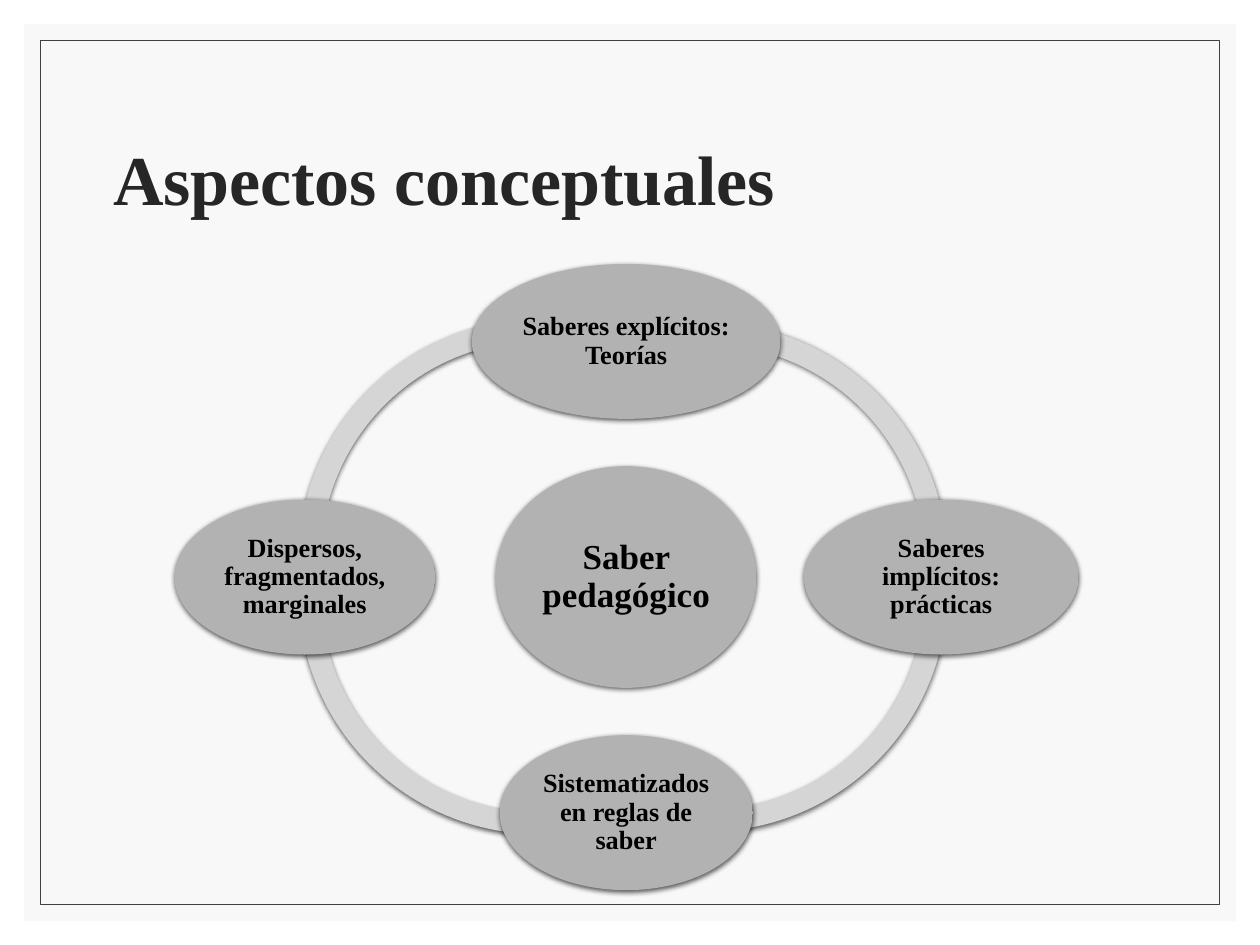
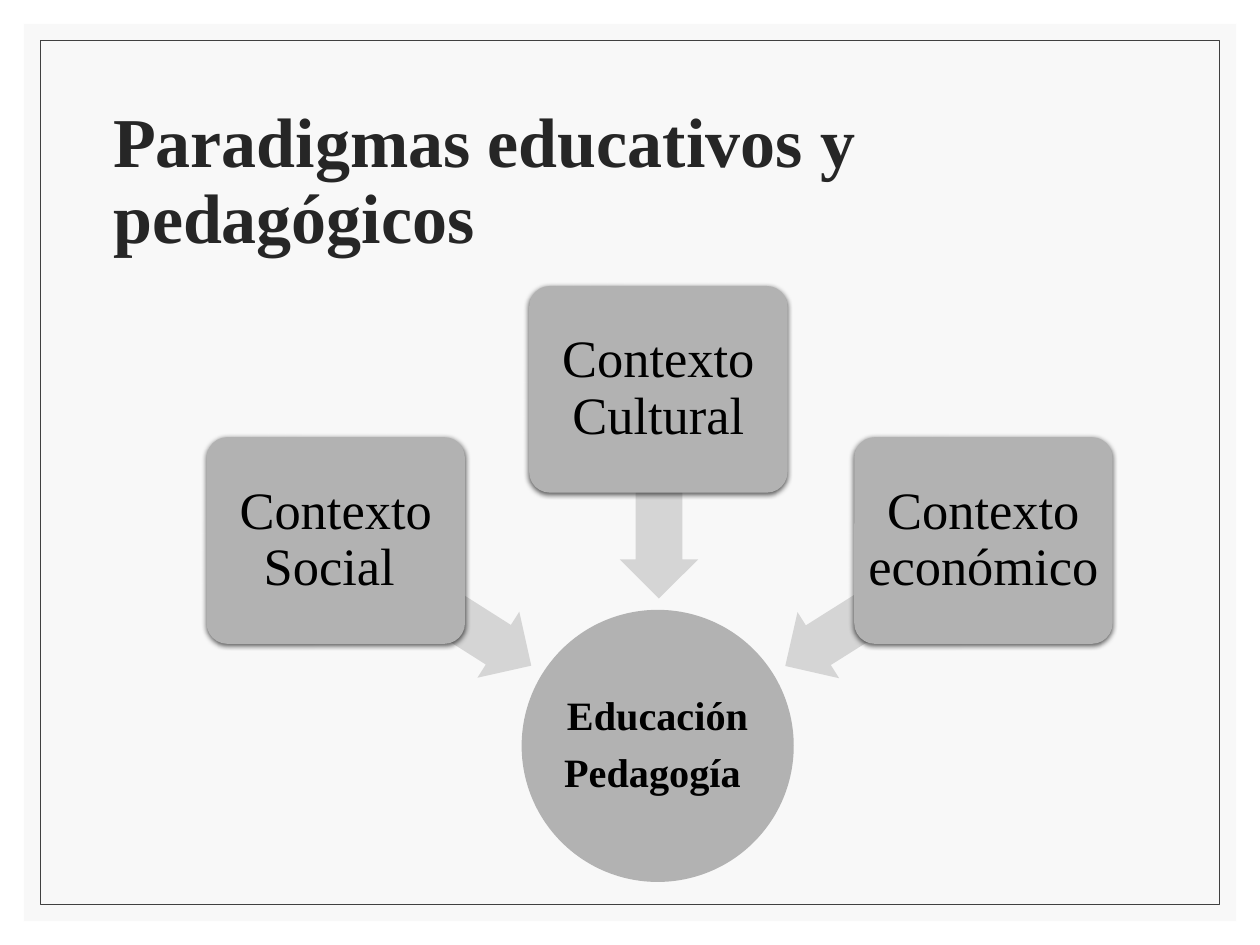
import pptx
import pptx.dml.color
import pptx.enum.shapes
import pptx.enum.text
import pptx.oxml
import pptx.oxml.ns
import pptx.util

Inches, Pt = pptx.util.Inches, pptx.util.Pt
SHAPE = pptx.enum.shapes.MSO_SHAPE
ALIGN = pptx.enum.text.PP_ALIGN
rgb = pptx.dml.color.RGBColor.from_string

PAPER, FRAME, TITLE, INK = "F8F8F8", "404040", "262626", "000000"
NODE, NODE_END, LINK = "B2B2B2", "B0B0B0", "D5D5D5"
SHADOW = (
    f'<a:effectLst {pptx.oxml.ns.nsdecls("a")}>'
    '<a:outerShdw blurRad="38100" dist="12700" dir="5400000" rotWithShape="0">'
    f'<a:srgbClr val="{INK}"><a:alpha val="63000"/></a:srgbClr>'
    "</a:outerShdw></a:effectLst>"
)


def add_shape(s, kind, box, fill=None, fill_end=None, line=None, shadow=False, adj=()):
    sp = s.shapes.add_shape(kind, *[Inches(v) for v in box])
    sp.shadow.inherit = False
    if shadow:
        sp._element.spPr.remove(sp._element.spPr.find(pptx.oxml.ns.qn("a:effectLst")))
        sp._element.spPr.append(pptx.oxml.parse_xml(SHADOW))
    if fill_end:
        sp.fill.gradient()
        sp.fill.gradient_angle = 270
        for stop, colour in zip(sp.fill.gradient_stops, (fill, fill_end)):
            stop.color.rgb = rgb(colour)
    elif fill:
        sp.fill.solid()
        sp.fill.fore_color.rgb = rgb(fill)
    else:
        sp.fill.background()
    if line:
        sp.line.color.rgb = rgb(line)
        sp.line.width = Pt(0.5)
    else:
        sp.line.fill.background()
    for i, value in enumerate(adj):
        sp.adjustments[i] = value
    return sp


def write_text(sp, lines, size, inset, bold=True, colour=INK, align=ALIGN.CENTER):
    tf = sp.text_frame
    frame_format = {"word_wrap": True, "vertical_anchor": pptx.enum.text.MSO_ANCHOR.MIDDLE}
    for side in ("left", "top", "right", "bottom"):
        frame_format[f"margin_{side}"] = Inches(inset)
    for name, value in frame_format.items():
        setattr(tf, name, value)
    for i, line in enumerate(lines):
        p = tf.paragraphs[0] if i == 0 else tf.add_paragraph()
        p.alignment, p.line_spacing, p.space_after = align, 0.9, Pt(round(size * 0.35))
        r = p.add_run()
        r.text = line
        for name, value in {"name": "Times New Roman", "size": Pt(size), "bold": bold}.items():
            setattr(r.font, name, value)
        r.font.color.rgb = rgb(colour)


prs = pptx.Presentation()
prs.slide_width, prs.slide_height = Inches(10), Inches(7.5)

# Paper, frame and title on every slide
slides = []
for title in ("Aspectos conceptuales", "Paradigmas educativos y pedagógicos"):
    s = prs.slides.add_slide(prs.slide_layouts[6])
    add_shape(s, SHAPE.RECTANGLE, (0.19, 0.19, 9.62, 7.12), PAPER)
    add_shape(s, SHAPE.RECTANGLE, (0.32, 0.32, 9.36, 6.86), line=FRAME)
    heading = s.shapes.add_textbox(*[Inches(v) for v in (0.8, 0.7, 8.4, 1.5)])
    write_text(heading, [title], 40, 0.1, colour=TITLE, align=ALIGN.LEFT)
    slides.append(s)
concepts, paradigms = slides

# Ring of four arcs; one adjustment unit is 100000/60000 of a degree
ARC_SIZE, ARC_THICKNESS = 3.82, 0.046
for left, top, start, end in (
    (2.37, 2.53, 105.51, 175.15),
    (2.37, 2.8, 40.85, 110.49),
    (3.7, 2.78, 213.92, 66.03),
    (3.7, 2.56, 149.98, 2.08),
):
    add_shape(concepts, SHAPE.BLOCK_ARC, (left, top, ARC_SIZE, ARC_SIZE), LINK, shadow=True,
              adj=(start, end, ARC_THICKNESS))

# Centre and four aspects, placed by their middle points
MID_X, MID_Y, RISE = 4.97, 4.58, 1.87
for text, x, y, width, height, size in (
    ("Saber pedagógico", MID_X, MID_Y, 2.07, 1.76, 20),
    ("Saberes explícitos: Teorías", MID_X, MID_Y - RISE, 2.45, 1.23, 15),
    ("Saberes implícitos: prácticas", 7.47, MID_Y, 2.18, 1.23, 15),
    ("Sistematizados en reglas de saber", MID_X, MID_Y + RISE, 2.01, 1.23, 15),
    ("Dispersos, fragmentados, marginales", 2.42, MID_Y, 2.07, 1.23, 15),
):
    sp = add_shape(concepts, SHAPE.OVAL, (x - width / 2, y - height / 2, width, height),
                   NODE, NODE_END, shadow=True)
    write_text(sp, [text], size, 0.02)

# Three contexts pointing at the circle
sp = add_shape(paradigms, SHAPE.OVAL, (4.14, 4.84, 2.16, 2.16), NODE)
write_text(sp, ["Educación", "Pedagogía "], 23, 0.02)
for text, left, top, arrow_left, arrow_top, arrow_length, angle in (
    ("Contexto Social ", 1.64, 3.47, 2.52, 4.48, 1.84, 212.4),
    ("Contexto Cultural", 4.2, 2.27, 4.4, 3.61, 1.66, 270),
    ("Contexto económico", 6.78, 3.47, 6.09, 4.48, 1.86, 327.8),
):
    arrow = add_shape(paradigms, SHAPE.LEFT_ARROW, (arrow_left, arrow_top, arrow_length, 0.62),
                      LINK, adj=(0.6, 0.5))
    arrow.rotation = angle
    sp = add_shape(paradigms, SHAPE.ROUNDED_RECTANGLE, (left, top, 2.05, 1.64), NODE,
                   shadow=True, adj=(0.1,))
    write_text(sp, [text], 30, 0.06, bold=False)

prs.save("out.pptx")
